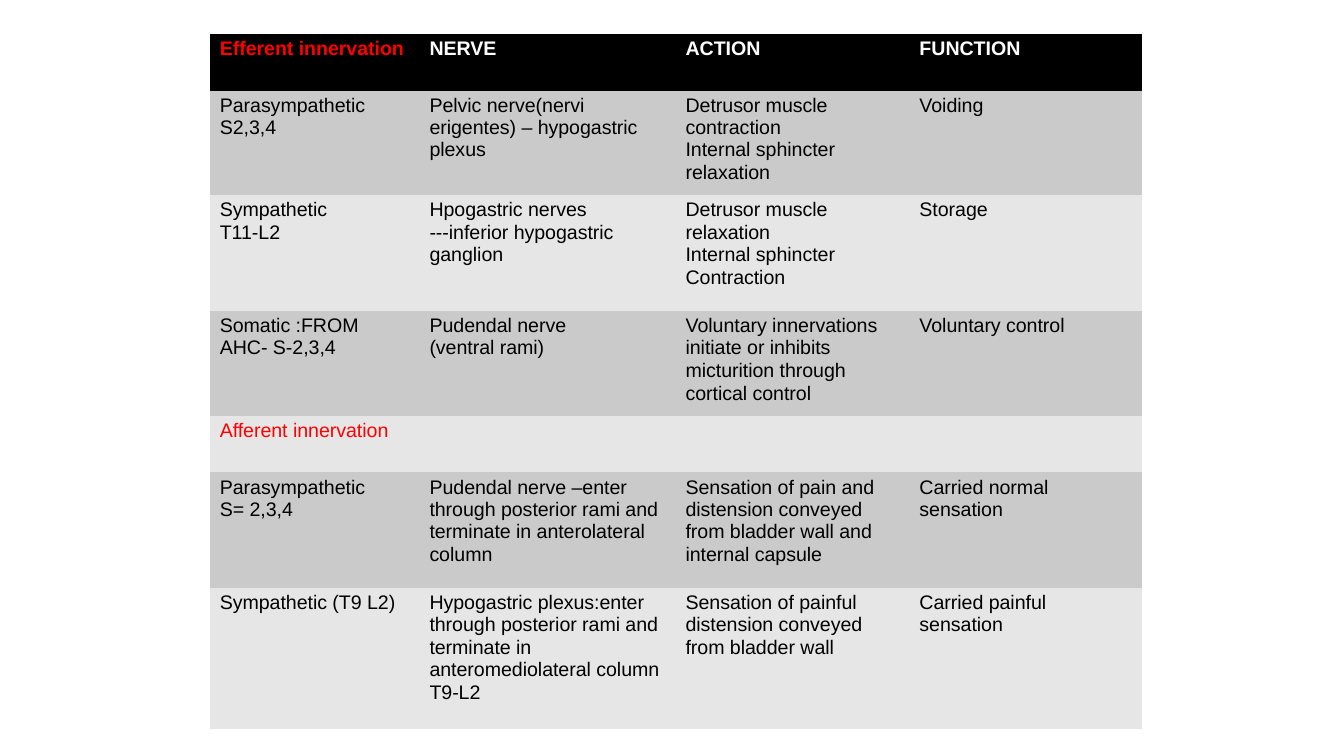
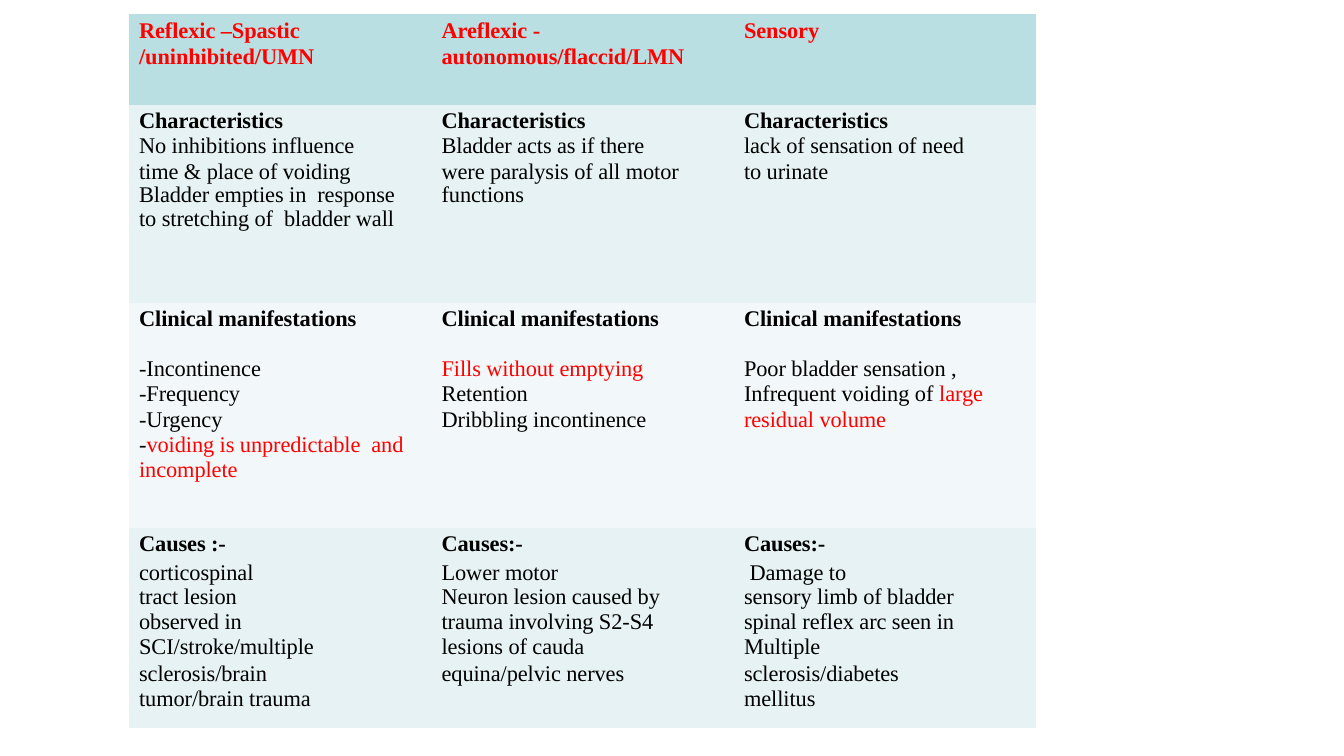
"""Build two slides of tables on bladder innervation and neurogenic bladder."""
from typing import NamedTuple

from pptx import Presentation
from pptx.dml.color import RGBColor
from pptx.util import Inches, Pt

BLACK = RGBColor(0, 0, 0)
WHITE = RGBColor(255, 255, 255)
RED = RGBColor(255, 0, 0)
DARK = RGBColor(0xCA, 0xCA, 0xCA)
LIGHT = RGBColor(0xE6, 0xE6, 0xE6)
TEAL = RGBColor(0xBA, 0xDF, 0xE2)
MIST = RGBColor(0xE6, 0xF2, 0xF3)
PALE = RGBColor(0xF2, 0xF8, 0xF9)

BLANK = 6
PLAIN = "{2D5ABB26-0587-4C30-8999-92F81FD0307C}"
TIGHT = "-6"
SMALL = "800"
FLAGS = {"first_row": False, "horz_banding": False}
EDGES = {"margin_left": 0, "margin_right": 0, "margin_bottom": 0}


class Row(NamedTuple):
    """Height in inches, line pitch and gap above in points, and cell texts."""
    height: float
    pitch: float
    cells: tuple[str, ...]
    gap: float = 0


class Band(NamedTuple):
    """Rows that share a fill; the first one gets the gap of the grid."""
    fill: RGBColor
    rows: list[Row]
    ink: RGBColor = BLACK
    bold: bool = False


class Grid(NamedTuple):
    """A table; in texts, bars enclose red words and # opens a bold line."""
    left: float
    top: float
    cols: tuple[float, ...]
    dents: tuple[float, ...]
    gap: float
    font: dict
    bands: list[Band]


NERVES = Grid(
    2.08, 0.34, (2.06, 2.54, 2.24, 2.41), (0.1, 0.12, 0.12, 0.2), 2.4,
    {"name": "Arial", "size": Pt(14)},
    [
        Band(BLACK, [
            Row(0.56, 16.1, ("|Efferent innervation|", "NERVE", "ACTION", "FUNCTION")),
        ], WHITE, True),
        Band(DARK, [
            Row(0.27, 16.1, ("Parasympathetic", "Pelvic nerve(nervi",
                             "Detrusor muscle", "Voiding")),
            Row(0.22, 14.8, ("S2,3,4", "erigentes) – hypogastric", "contraction")),
            Row(0.22, 14.8, ("", "plexus", "Internal sphincter")),
            Row(0.33, 15.5, ("", "", "relaxation")),
        ]),
        Band(LIGHT, [
            Row(0.27, 16, ("Sympathetic", "Hpogastric nerves", "Detrusor muscle", "Storage")),
            Row(0.22, 14.8, ("T11-L2", "---inferior hypogastric", "relaxation")),
            Row(0.22, 14.8, ("", "ganglion", "Internal sphincter")),
            Row(0.44, 15.5, ("", "", "Contraction")),
        ]),
        Band(DARK, [
            Row(0.27, 16, ("Somatic :FROM", "Pudendal nerve",
                           "Voluntary innervations", "Voluntary control")),
            Row(0.22, 14.8, ("AHC- S-2,3,4", "(ventral rami)", "initiate or inhibits")),
            Row(0.22, 14.8, ("", "", "micturition through")),
            Row(0.33, 15.5, ("", "", "cortical control")),
        ]),
        Band(LIGHT, [Row(0.56, 16.1, ("|Afferent innervation|",))]),
        Band(DARK, [
            Row(0.27, 16.1, ("Parasympathetic", "Pudendal nerve –enter",
                             "Sensation of pain and", "Carried normal")),
            Row(0.22, 14.8, ("S= 2,3,4", "through posterior rami and",
                             "distension conveyed", "sensation")),
            Row(0.22, 14.8, ("", "terminate in anterolateral", "from bladder wall and")),
            Row(0.44, 15.5, ("", "column", "internal capsule")),
        ]),
        Band(LIGHT, [
            Row(0.27, 16, ("Sympathetic (T9 L2)", "Hypogastric plexus:enter",
                           "Sensation of painful", "Carried painful")),
            Row(0.22, 14.8, ("", "through posterior rami and",
                             "distension conveyed", "sensation")),
            Row(0.22, 14.8, ("", "terminate in", "from bladder wall")),
            Row(0.22, 14.8, ("", "anteromediolateral column")),
            Row(0.47, 15.5, ("", "T9-L2")),
        ]),
    ],
)

TYPES = Grid(
    1.28, 0.14, (2.93, 3.07, 3), (0.1, 0.17, 0.1), 2.1,
    {"name": "Times New Roman", "size": Pt(16)},
    [
        Band(TEAL, [
            Row(0.9, 18.5, ("Reflexic –Spastic\v/uninhibited/UMN",
                            "Areflexic -\vautonomous/flaccid/LMN", "Sensory")),
        ], RED, True),
        Band(MIST, [
            Row(0.3, 18.4, ("#Characteristics",) * 3),
            Row(0.25, 16.8, ("No inhibitions influence", "Bladder acts as if there",
                             "lack of sensation of need")),
            Row(1.42, 16.9, ("time & place of voiding\n"
                             "Bladder empties in  response\vto stretching of  bladder wall",
                             "were paralysis of all motor\vfunctions", "to urinate")),
        ]),
        Band(PALE, [
            Row(0.42, 18.2, ("#Clinical manifestations",) * 3),
            Row(0.37, 18.3, ("-Incontinence", "|Fills without emptying|",
                             "Poor bladder sensation ,"), 7.3),
            Row(0.25, 16.8, ("-Frequency", "Retention", "Infrequent voiding of |large|")),
            Row(1.19, 17.6, ("-Urgency\n-|voiding is unpredictable  and\vincomplete|",
                             "Dribbling incontinence", "|residual volume|")),
        ]),
        Band(MIST, [
            Row(0.3, 18.4, ("#Causes :-\ncorticospinal", "#Causes:-\nLower motor",
                            "#Causes:-\n Damage to")),
            Row(0.25, 16.8, ("tract lesion", "Neuron lesion caused by",
                             "sensory limb of bladder")),
            Row(0.25, 16.8, ("observed in", "trauma involving S2-S4",
                             "spinal reflex arc seen in")),
            Row(0.25, 16.8, ("SCI/stroke/multiple", "lesions of cauda", "Multiple")),
            Row(0.66, 17.8, ("sclerosis/brain\vtumor/brain trauma",
                             "equina/pelvic nerves", "sclerosis/diabetes\vmellitus")),
        ]),
    ],
)


def apply(item, values: dict) -> None:
    """Set each named attribute of an item."""
    for name, value in values.items():
        setattr(item, name, value)


def write(para, line: str, font: dict, ink: RGBColor, bold: bool) -> None:
    """Write one marked line as runs and line breaks."""
    bold = bold or line.startswith("#")
    for part, words in enumerate(line.removeprefix("#").split("|")):
        for turn, text in enumerate(words.split("\v")):
            if turn:
                para.add_line_break()
            if text:
                run = para.add_run()
                run.text = text
                apply(run.font, font | {"bold": bold})
                run.font.color.rgb = RED if part % 2 else ink
                run.font._element.set("spc", TIGHT)


def fill(cell, text: str, dent: float, gap: float, row: Row, band: Band, font: dict) -> None:
    """Colour a cell and set its paragraphs."""
    apply(cell, EDGES | {"margin_top": Pt(gap)})
    cell.fill.solid()
    cell.fill.fore_color.rgb = band.fill
    frame = cell.text_frame
    if not text:
        frame.paragraphs[0]._p.get_or_add_endParaRPr().set("sz", SMALL)
        return
    for order, line in enumerate(text.split("\n")):
        para = frame.add_paragraph() if order else frame.paragraphs[0]
        apply(para, {"line_spacing": Pt(row.pitch), "space_before": Pt(gap)})
        para._p.get_or_add_pPr().set("marL", str(Inches(dent)))
        write(para, line, font, band.ink, band.bold)


def draw(deck, grid: Grid) -> None:
    """Add a slide that holds one table."""
    lines = [(band, row, row.gap if order else grid.gap)
             for band in grid.bands for order, row in enumerate(band.rows)]
    size = sum(grid.cols), sum(row.height for _, row, _ in lines)
    slide = deck.slides.add_slide(deck.slide_layouts[BLANK])
    table = slide.shapes.add_table(
        len(lines), len(grid.cols), *map(Inches, (grid.left, grid.top, *size))).table
    apply(table, FLAGS)
    table._tbl.tblPr[0].text = PLAIN
    for col, width in zip(table.columns, grid.cols):
        col.width = Inches(width)
    for line, (band, row, gap) in zip(table.rows, lines):
        line.height = Inches(row.height)
        texts = row.cells + ("",) * (len(grid.cols) - len(row.cells))
        for cell, text, dent in zip(line.cells, texts, grid.dents):
            fill(cell, text, dent, gap if text else 0, row, band, grid.font)


def main() -> None:
    """Build and save the deck."""
    deck = Presentation()
    apply(deck, {"slide_width": Inches(13.33), "slide_height": Inches(7.5)})
    for grid in (NERVES, TYPES):
        draw(deck, grid)
    deck.save("out.pptx")


if __name__ == "__main__":
    main()
